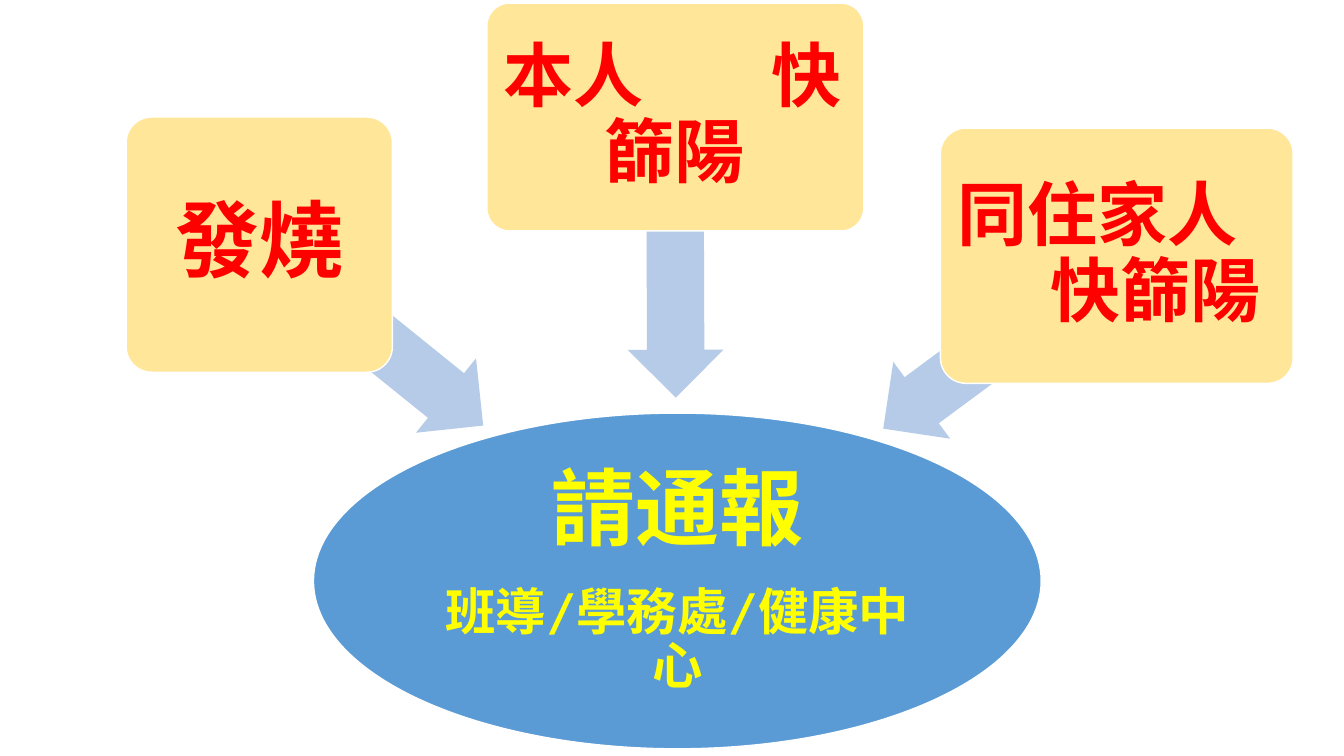
from lxml.etree import SubElement
from pptx import Presentation
from pptx.dml.color import RGBColor
from pptx.enum.shapes import MSO_SHAPE
from pptx.enum.text import MSO_ANCHOR, PP_ALIGN
from pptx.oxml.ns import qn
from pptx.util import Cm, Pt

WHITE = RGBColor(0xFF, 0xFF, 0xFF)
BLUE = RGBColor(0x5B, 0x9B, 0xD5)
PALE_BLUE = RGBColor(0xB5, 0xCB, 0xE7)
CREAM = RGBColor(0xFF, 0xE6, 0x99)
RED = RGBColor(0xFF, 0x00, 0x00)
YELLOW = RGBColor(0xFF, 0xFF, 0x00)
FONT = "DejaVu Sans Mono"

ARROW_THICKNESS = 2.41
SYMPTOMS = [
    {"box": (3.18, 2.95, 6.71, 6.43), "text": "發燒", "size": 60, "inset": 0.3,
     "tabs": (), "arrow": (9.36, 8.45, 7.24, 218.9)},
    {"box": (12.27, 0.08, 9.5, 5.74), "text": "本人\t快\v\t篩陽", "size": 50, "inset": 0.25,
     "tabs": (2.55, 6.75), "arrow": (17.02, 6.49, 7.06, 269.8)},
    {"box": (23.7, 3.23, 8.89, 6.43), "text": "同住家人\v\t快篩陽", "size": 50, "inset": 0.25,
     "tabs": (2.33,), "arrow": (25.21, 8.62, 7.34, 323.5)},
]
REPORT_BOX = (7.9, 10.41, 18.34, 8.46)
REPORT_LINES = [("請通報", 60), ("班導/學務處/健康中心", 36)]


def add_filled_shape(slide, kind, box, fill, line=None):
    """Add a flat preset shape in a box given in centimetres."""
    shape = slide.shapes.add_shape(kind, *map(Cm, box))
    shape.shadow.inherit = False
    shape.fill.solid()
    shape.fill.fore_color.rgb = fill
    if line is None:
        shape.line.fill.background()
    else:
        shape.line.color.rgb = line
        shape.line.width = Pt(1)
    return shape


def write_lines(shape, lines, color, inset, tabs=()):
    """Write bold lines of (text, size) in a shape, set on tab stops if given."""
    frame = shape.text_frame
    frame.word_wrap = True
    frame.vertical_anchor = MSO_ANCHOR.MIDDLE
    frame.margin_left = frame.margin_right = Cm(inset)
    frame.margin_top = frame.margin_bottom = Cm(inset)
    for index, (text, size) in enumerate(lines):
        paragraph = frame.add_paragraph() if index else frame.paragraphs[0]
        paragraph.text = text
        paragraph.alignment = PP_ALIGN.LEFT if tabs else PP_ALIGN.CENTER
        paragraph.line_spacing = 0.9
        paragraph.space_after = Pt(0.35 * size)
        paragraph.font.name = FONT
        paragraph.font.size = Pt(size)
        paragraph.font.bold = True
        paragraph.font.color.rgb = color
        if tabs:
            properties = paragraph._p.get_or_add_pPr()
            tab_list = SubElement(properties, qn("a:tabLst"))
            properties.insert_element_before(tab_list, "a:defRPr", "a:extLst")
            for position in tabs:
                SubElement(tab_list, qn("a:tab"), pos=str(Cm(position)), algn="l")


def add_arrow(slide, center_x, center_y, length, rotation):
    """Add a block arrow around its centre, turned towards the report."""
    box = (center_x - length / 2, center_y - ARROW_THICKNESS / 2, length, ARROW_THICKNESS)
    arrow = add_filled_shape(slide, MSO_SHAPE.LEFT_ARROW, box, PALE_BLUE)
    arrow.adjustments[0] = 0.6
    arrow.adjustments[1] = 0.5
    arrow.rotation = rotation


def add_symptom(slide, box, text, size, inset, tabs, arrow):
    """Add a symptom card above the arrow that leaves it."""
    add_arrow(slide, *arrow)
    card = add_filled_shape(slide, MSO_SHAPE.ROUNDED_RECTANGLE, box, CREAM, WHITE)
    card.adjustments[0] = 0.1
    write_lines(card, [(text, size)], RED, inset, tabs)


def add_report(slide, box):
    """Add the ellipse that says whom to notify."""
    ellipse = add_filled_shape(slide, MSO_SHAPE.OVAL, box, BLUE, WHITE)
    write_lines(ellipse, REPORT_LINES, YELLOW, 0.1)


def main():
    """Build the notification slide and save it."""
    presentation = Presentation()
    presentation.slide_width = Cm(33.87)
    presentation.slide_height = Cm(19.05)
    slide = presentation.slides.add_slide(presentation.slide_layouts[6])
    add_report(slide, REPORT_BOX)
    for symptom in SYMPTOMS:
        add_symptom(slide, **symptom)
    presentation.save("out.pptx")


if __name__ == "__main__":
    main()
